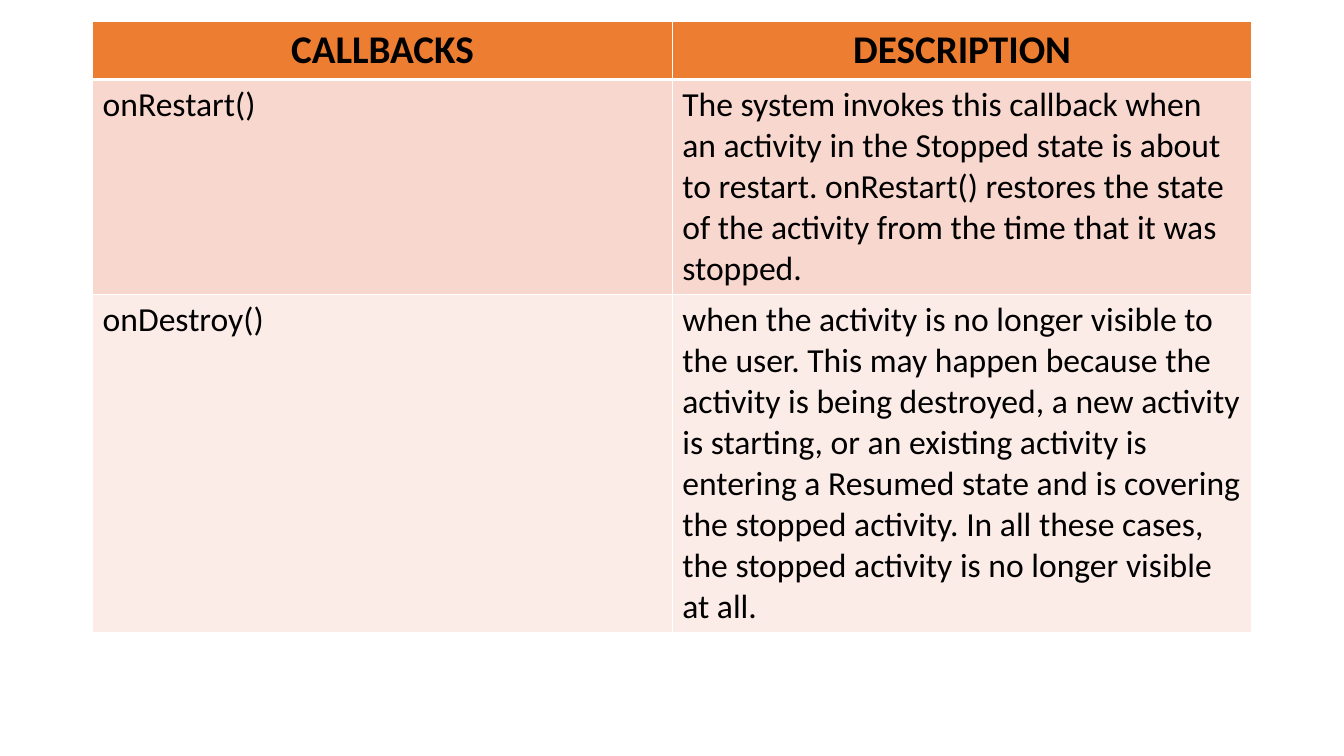
from lxml.etree import SubElement
from pptx import Presentation
from pptx.dml.color import RGBColor
from pptx.enum.text import PP_ALIGN as Align
from pptx.oxml.ns import qn
from pptx.util import Pt


def rgb(value):
    return RGBColor.from_string(value)


class SlideBuilder:
    font = "Calibri"
    text_color = "000000"
    border_color = "FFFFFF"
    header_size = 28
    body_size = 24
    row_fills = ("ED7D31", "F8D7CE", "FCECE8")

    def __init__(self, prs):
        self.slide = prs.slides.add_slide(prs.slide_layouts[6])

    def border(self, cell, side, width):
        ln = SubElement(cell._tc.get_or_add_tcPr(), qn(f"a:ln{side}"), w=str(Pt(width)))
        fill = SubElement(ln, qn("a:solidFill"))
        SubElement(fill, qn("a:srgbClr"), val=self.border_color)

    def cell(self, cell, text, row):
        header = row == 0
        widths = {"L": 1, "R": 1, "T": 3 if row == 1 else 1, "B": 3 if header else 1}
        for side, width in widths.items():
            self.border(cell, side, width)
        cell.fill.solid()
        cell.fill.fore_color.rgb = rgb(self.row_fills[row])
        cell.text = text
        p = cell.text_frame.paragraphs[0]
        p.alignment = Align.CENTER if header else Align.LEFT
        p.font.name = self.font
        p.font.size = Pt(self.header_size if header else self.body_size)
        p.font.bold = header
        p.font.color.rgb = rgb(self.text_color)

    def table(self, left, top, col_widths, row_heights, rows):
        frame = self.slide.shapes.add_table(
            len(rows), len(col_widths), Pt(left), Pt(top),
            Pt(sum(col_widths)), Pt(sum(row_heights)))
        table = frame.table
        for column, width in zip(table.columns, col_widths):
            column.width = Pt(width)
        for i, (height, texts) in enumerate(zip(row_heights, rows)):
            table.rows[i].height = Pt(height)
            for j, text in enumerate(texts):
                self.cell(table.cell(i, j), text, i)


def main():
    prs = Presentation()
    prs.slide_width, prs.slide_height = Pt(960), Pt(540)
    builder = SlideBuilder(prs)
    builder.table(66.2, 15.4, [414, 414], [40.5, 153.5, 241.5], [
        ("CALLBACKS", "DESCRIPTION"),
        ("onRestart()",
         "The system invokes this callback when an activity in the Stopped state "
         "is about to restart. onRestart() restores the state of the activity "
         "from the time that it was stopped."),
        ("onDestroy()",
         "when the activity is no longer visible to the user. This may happen "
         "because the activity is being destroyed, a new activity is starting, "
         "or an existing activity is entering a Resumed state and is covering "
         "the stopped activity. In all these cases, the stopped activity is no "
         "longer visible at all."),
    ])
    prs.save("out.pptx")


if __name__ == "__main__":
    main()
